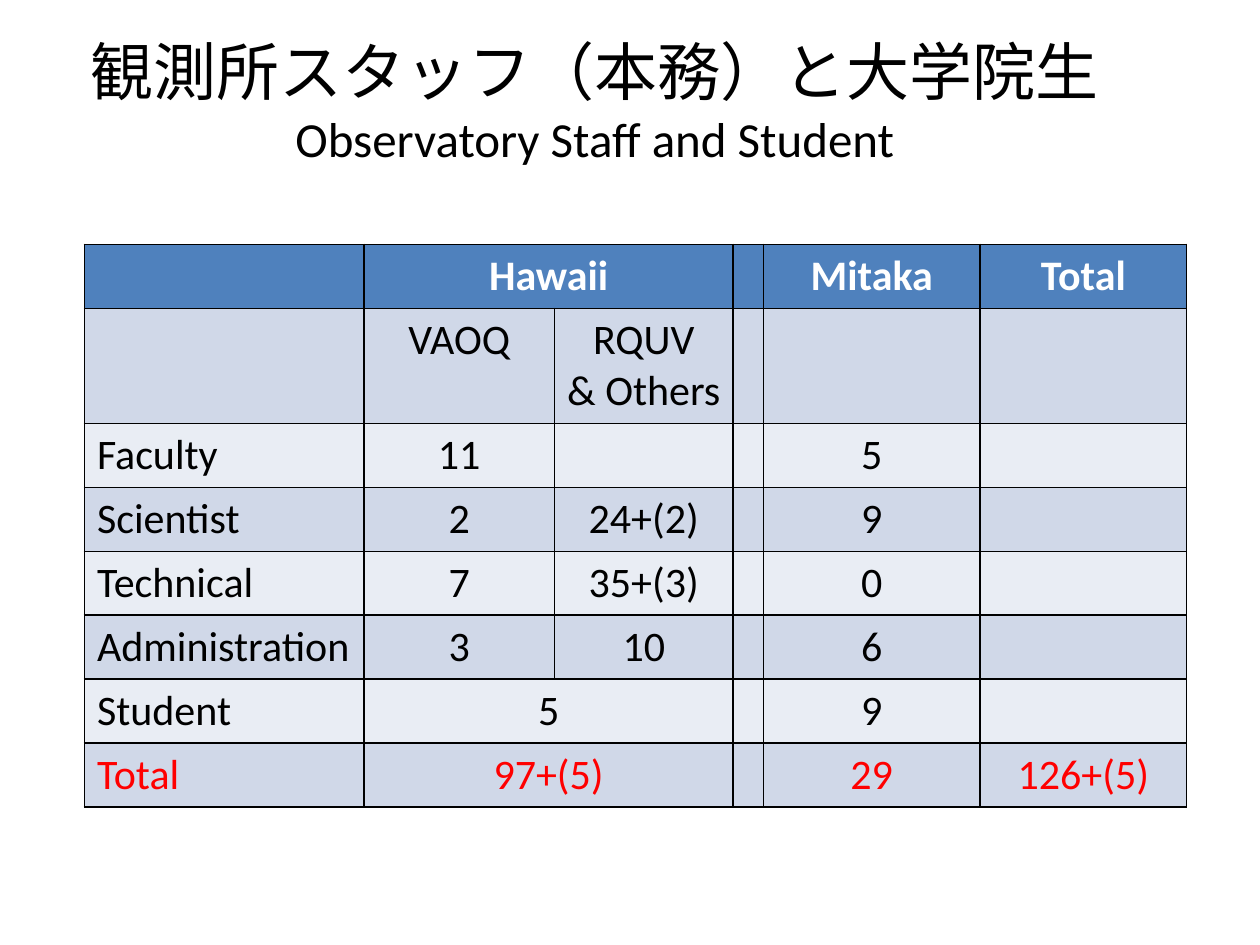
"""Build the slide of observatory staff and student numbers."""
from lxml import etree
from pptx import Presentation, util as u
from pptx.dml.color import RGBColor
from pptx.enum import text
from pptx.oxml.ns import qn

COLORS = {"head": "4F81BD", "dark": "D0D8E8", "light": "E9EDF4",
          "white": "FFFFFF", "black": "000000", "red": "FF0000"}
COLUMNS = [22.2, 15.1, 14.2, 2.3, 17.2, 16.4]
ROWS = [3.9] + [4.1] * 7
STAFF = [
    ["", "Hawaii", "", "", "Mitaka", "Total"],
    ["", "VAOQ", "RQUV\n& Others", "", "", ""],
    ["Faculty", "11", "", "", "5", ""],
    ["Scientist", "2", "24+(2)", "", "9", ""],
    ["Technical", "7", "35+(3)", "", "0", ""],
    ["Administration", "3", "10", "", "6", ""],
    ["Student", "5", "", "", "9", ""],
    ["Total", "97+(5)", "", "", "29", "126+(5)"],
]
HAWAII_MERGED = (0, 6, 7)


def add_span(para, words, size=24, color="black", bold=False, font="Calibri"):
    """Append formatted words to a paragraph."""
    span = para.add_run()
    span.text = words
    span.font.name = font
    span.font.size = u.Pt(size)
    span.font.bold = bold
    span.font.color.rgb = RGBColor.from_string(COLORS[color])


class Page:
    """Draw on one slide with a grid of 100 columns by 75 rows."""

    def __init__(self, deck):
        """Add a blank slide and work out the grid unit."""
        self.unit = deck.slide_width / 100
        self.page = deck.slides.add_slide(deck.slide_layouts[6])

    def grid(self, *places):
        """Turn grid units into lengths."""
        return [u.Emu(round(place * self.unit)) for place in places]

    def title(self, place, lines):
        """Add a centred title from pairs of words and size."""
        box = self.page.shapes.add_textbox(*self.grid(*place))
        box.text_frame.word_wrap = True
        box.text_frame.auto_size = text.MSO_AUTO_SIZE.SHAPE_TO_FIT_TEXT
        para = box.text_frame.paragraphs[0]
        para.alignment = text.PP_ALIGN.CENTER
        for index, (words, size) in enumerate(lines):
            if index:
                para.add_line_break()
            add_span(para, words, size=size)

    def cell(self, cell, words, fill, align, **style):
        """Border, fill and write one table cell."""
        props = cell._tc.get_or_add_tcPr()
        for side in ("lnL", "lnR", "lnT", "lnB"):
            line = etree.SubElement(props, qn(f"a:{side}"), w=str(u.Pt(1)))
            solid = etree.SubElement(line, qn("a:solidFill"))
            etree.SubElement(solid, qn("a:srgbClr"), val=COLORS["black"])
        cell.fill.solid()
        cell.fill.fore_color.rgb = RGBColor.from_string(COLORS[fill])
        for index, line in enumerate(words.split("\n") if words else []):
            frame = cell.text_frame
            para = frame.add_paragraph() if index else frame.paragraphs[0]
            para.alignment = align
            add_span(para, line, **style)

    def table(self, place, data, columns, rows, merged):
        """Add the banded table with a header row and a red total row."""
        frame = self.page.shapes.add_table(
            len(rows), len(columns), *self.grid(*place))
        table = frame.table
        for column, width in zip(table.columns, self.grid(*columns)):
            column.width = width
        for row, height in zip(table.rows, self.grid(*rows)):
            row.height = height
        frame.height = self.grid(place[3])[0]
        for r, values in enumerate(data):
            fill = "head" if r == 0 else "dark" if r % 2 else "light"
            color = {0: "white", len(data) - 1: "red"}.get(r, "black")
            for c, words in enumerate(values):
                align = text.PP_ALIGN.CENTER if c else text.PP_ALIGN.LEFT
                self.cell(table.cell(r, c), words, fill, align,
                          color=color, bold=r == 0)
        for r in merged:
            table.cell(r, 1).merge(table.cell(r, 2))


def main():
    """Build and save the deck."""
    deck = Presentation()
    deck.slide_width, deck.slide_height = u.Inches(10), u.Inches(7.5)
    page = Page(deck)
    page.table((6.7, 19.4, 87.4, 44), STAFF, COLUMNS, ROWS, HAWAII_MERGED)
    page.title((4.3, 2.1, 85.8, 11.8),
               [("観測所スタッフ（本務）と大学院生", 36),
                ("Observatory Staff and Student", 28)])
    deck.save("out.pptx")


if __name__ == "__main__":
    main()
